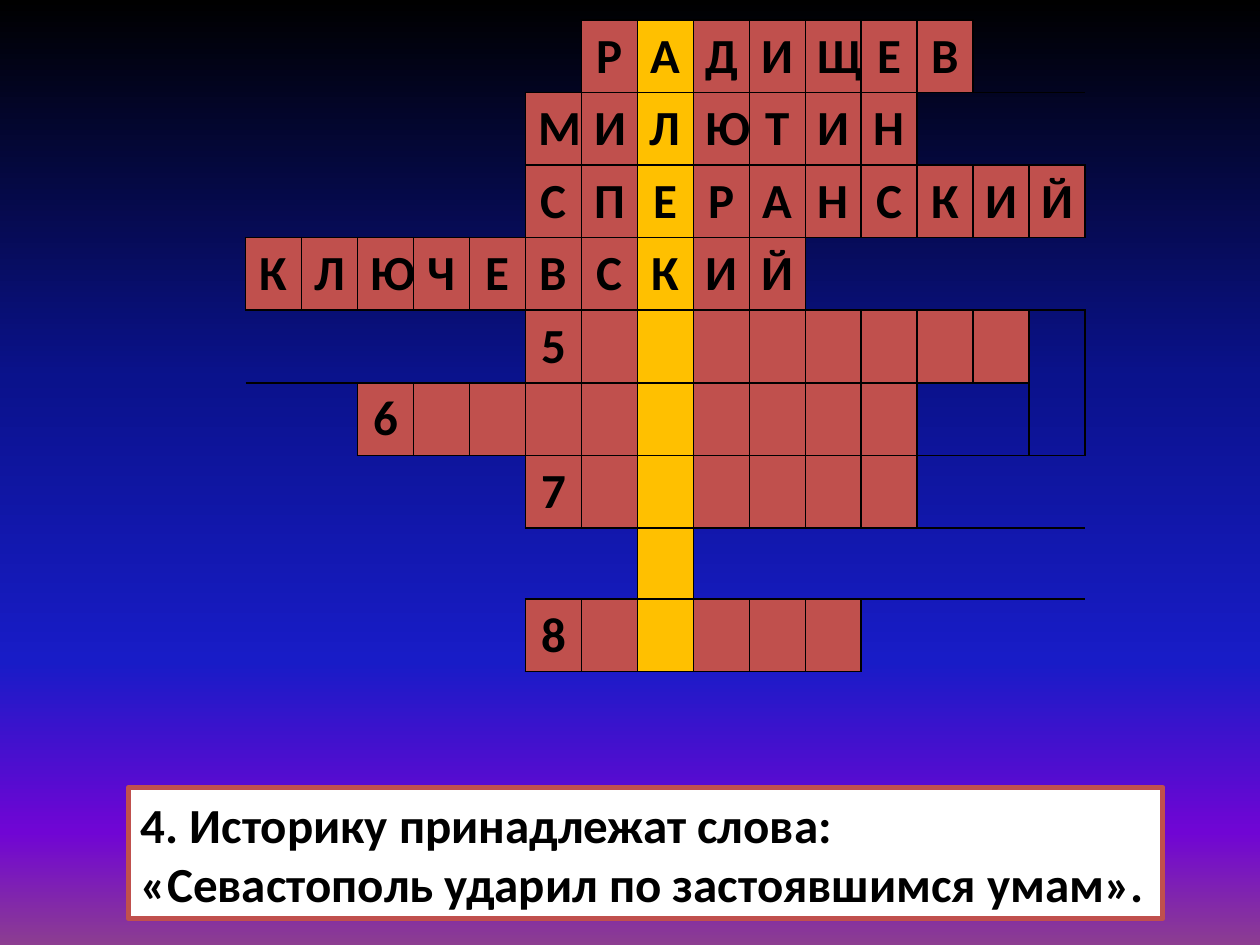
"""Build a crossword slide with a clue box under the grid."""
from dataclasses import dataclass

from lxml.etree import SubElement
from pptx import Presentation
from pptx.dml.color import RGBColor
from pptx.enum.shapes import MSO_SHAPE
from pptx.enum.text import MSO_ANCHOR, MSO_AUTO_SIZE, PP_ALIGN
from pptx.oxml.ns import qn
from pptx.slide import Slide
from pptx.table import Table, _Cell
from pptx.text.text import _Paragraph
from pptx.util import Pt

RECTANGLE = MSO_SHAPE.RECTANGLE
MIDDLE = MSO_ANCHOR.MIDDLE
FIT_SHAPE = MSO_AUTO_SIZE.SHAPE_TO_FIT_TEXT
CENTER, LEFT = PP_ALIGN.CENTER, PP_ALIGN.LEFT
PLAIN_TABLE_STYLE = "{2D5ABB26-0587-4C30-8999-92F81FD0307C}"
ALL_EDGES = "LRTB"
COLUMNS, KEY_COLUMN = 15, 7
COLUMN_WIDTH, ROW_HEIGHT = Pt(32), Pt(40.8)


@dataclass(frozen=True)
class Theme:
    font: str = "Calibri"
    text_size: int = 28
    ink: str = "000000"
    paper: str = "FFFFFF"
    word: str = "C0504D"
    key: str = "FFC000"
    grid_width: int = 1
    frame_width: int = 3
    sky: tuple[tuple[int, str], ...] = (
        (0, "000000"), (40, "0A128C"), (70, "181CC7"), (88, "7005D4"), (100, "8C3D91"))


@dataclass(frozen=True)
class Word:
    start: int
    length: int
    letters: str


@dataclass(frozen=True)
class Gap:
    row: int
    column: int
    rows: int
    columns: int
    edges: str


THEME = Theme()
WORDS = (
    Word(6, 7, "РАДИЩЕВ"),
    Word(5, 7, "МИЛЮТИН"),
    Word(5, 10, "СПЕРАНСКИЙ"),
    Word(0, 10, "КЛЮЧЕВСКИЙ"),
    Word(5, 9, "5"),
    Word(2, 10, "6"),
    Word(5, 7, "7"),
    Word(7, 1, ""),
    Word(5, 6, "8"),
)
GAPS = (
    Gap(0, 0, 1, 6, "R"), Gap(0, 13, 1, 2, "L"),
    Gap(1, 0, 2, 5, "RB"), Gap(1, 12, 1, 3, "LTB"),
    Gap(3, 10, 1, 5, "LTB"),
    Gap(4, 0, 1, 5, "RT"), Gap(4, 14, 2, 1, "L"),
    Gap(5, 0, 1, 2, "R"), Gap(5, 12, 1, 2, "LT"),
    Gap(6, 0, 1, 5, "R"), Gap(6, 12, 1, 3, "L"),
    Gap(7, 0, 1, 7, "R"), Gap(7, 8, 1, 7, "LTB"),
    Gap(8, 0, 1, 5, "R"), Gap(8, 11, 1, 4, "L"),
)
CLUE = (
    "4. Историку принадлежат слова:",
    "«Севастополь ударил по застоявшимся умам».",
)


def rgb(color: str) -> RGBColor:
    return RGBColor.from_string(color)


def write(paragraph: _Paragraph, text: str, alignment: PP_ALIGN) -> None:
    paragraph.alignment = alignment
    run = paragraph.add_run()
    run.text = text
    run.font.name = THEME.font
    run.font.size = Pt(THEME.text_size)
    run.font.bold = True
    run.font.color.rgb = rgb(THEME.ink)


def paint_sky(slide: Slide) -> None:
    fill = slide.background.fill
    fill.gradient()
    fill.gradient_angle = 270
    stops = next(slide._element.iter(qn("a:gsLst")))
    for stop in list(stops):
        stops.remove(stop)
    for percent, color in THEME.sky:
        stop = SubElement(stops, qn("a:gs"), pos=str(percent * 1000))
        SubElement(stop, qn("a:srgbClr"), val=color)


def draw_edges(cell: _Cell, edges: str) -> None:
    properties = cell._tc.get_or_add_tcPr()
    for edge in edges:
        line = SubElement(properties, qn(f"a:ln{edge}"), w=str(Pt(THEME.grid_width)))
        solid = SubElement(line, qn("a:solidFill"))
        SubElement(solid, qn("a:srgbClr"), val=THEME.ink)


def draw_word(grid: Table, row: int, word: Word) -> None:
    for offset in range(word.length):
        column = word.start + offset
        cell = grid.cell(row, column)
        draw_edges(cell, ALL_EDGES)
        cell.fill.solid()
        cell.fill.fore_color.rgb = rgb(THEME.key if column == KEY_COLUMN else THEME.word)
        if offset < len(word.letters):
            write(cell.text_frame.paragraphs[0], word.letters[offset], CENTER)


def draw_gap(grid: Table, gap: Gap) -> None:
    cell = grid.cell(gap.row, gap.column)
    cell.merge(grid.cell(gap.row + gap.rows - 1, gap.column + gap.columns - 1))
    draw_edges(cell, gap.edges)
    cell.fill.background()


def draw_crossword(slide: Slide) -> None:
    grid = slide.shapes.add_table(
        len(WORDS), COLUMNS, Pt(140.4), Pt(11.5),
        COLUMN_WIDTH * COLUMNS, ROW_HEIGHT * len(WORDS)).table
    grid.first_row = grid.horz_banding = False
    next(grid._tbl.iter(qn("a:tableStyleId"))).text = PLAIN_TABLE_STYLE
    for column in grid.columns:
        column.width = COLUMN_WIDTH
    for row in grid.rows:
        row.height = ROW_HEIGHT
    for index, word in enumerate(WORDS):
        draw_word(grid, index, word)
    for gap in GAPS:
        draw_gap(grid, gap)


def draw_clue(slide: Slide) -> None:
    box = slide.shapes.add_shape(RECTANGLE, Pt(73.4), Pt(450), Pt(591.1), Pt(75))
    box.shadow.inherit = False
    box.fill.solid()
    box.fill.fore_color.rgb = rgb(THEME.paper)
    box.line.color.rgb = rgb(THEME.word)
    box.line.width = Pt(THEME.frame_width)
    frame = box.text_frame
    frame.word_wrap = False
    frame.auto_size = FIT_SHAPE
    frame.vertical_anchor = MIDDLE
    for index, line in enumerate(CLUE):
        paragraph = frame.add_paragraph() if index else frame.paragraphs[0]
        write(paragraph, line, LEFT)


def main() -> None:
    deck = Presentation()
    deck.slide_width, deck.slide_height = Pt(720), Pt(540)
    slide = deck.slides.add_slide(deck.slide_layouts[6])
    paint_sky(slide)
    draw_crossword(slide)
    draw_clue(slide)
    deck.save("out.pptx")


if __name__ == "__main__":
    main()
